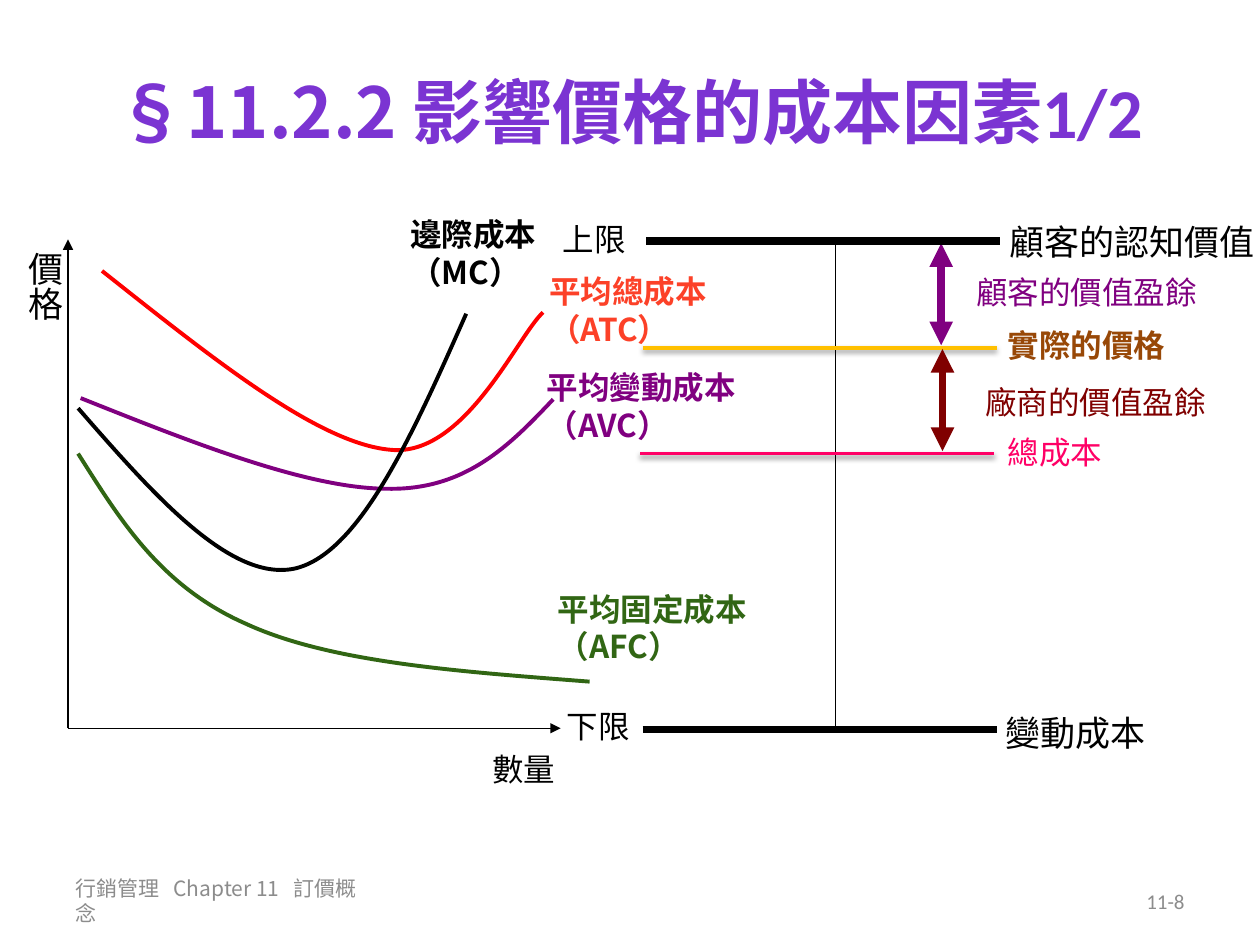
from lxml import etree
from pptx import Presentation
from pptx.dml.color import RGBColor
from pptx.enum import shapes, text
from pptx.oxml import ns
from pptx.util import Inches, Pt

BLACK = RGBColor(0x00, 0x00, 0x00)
GRAY = RGBColor(0x8C, 0x8C, 0x8C)
TITLE_PURPLE = RGBColor(0x7B, 0x34, 0xD2)
PURPLE = RGBColor(0x80, 0x00, 0x80)
MAROON = RGBColor(0x80, 0x00, 0x00)
GOLD = RGBColor(0xFF, 0xC0, 0x00)
BROWN = RGBColor(0x98, 0x48, 0x07)
PINK = RGBColor(0xFF, 0x00, 0x66)
RED = RGBColor(0xFF, 0x00, 0x00)
ORANGE_RED = RGBColor(0xFC, 0x41, 0x28)
GREEN = RGBColor(0x31, 0x66, 0x14)
CJK = "Noto Sans CJK SC"
LATIN = "Calibri"

presentation = Presentation()
presentation.slide_width = Inches(10)
presentation.slide_height = Inches(7.5)
slide = presentation.slides.add_slide(presentation.slide_layouts[5])


def add_run(paragraph, words, size, color, bold=False, latin=CJK):
    run = paragraph.add_run()
    run.text = words
    run.font.size = Pt(size)
    run.font.bold = bold
    run.font.color.rgb = color
    run.font.name = latin
    east_asian = etree.SubElement(run._r.get_or_add_rPr(), ns.qn("a:ea"))
    east_asian.set("typeface", CJK)


def add_line(start, end, color, width, arrows=(), shadow=False):
    line = slide.shapes.add_connector(
        shapes.MSO_CONNECTOR.STRAIGHT,
        Inches(start[0]), Inches(start[1]), Inches(end[0]), Inches(end[1]))
    line.line.color.rgb = color
    line.line.width = Pt(width)
    for arrow in arrows:
        etree.SubElement(line.line._get_or_add_ln(), ns.qn(f"a:{arrow}")).set("type", "triangle")
    effects = etree.SubElement(line._element.spPr, ns.qn("a:effectLst"))
    if shadow:
        outer = etree.SubElement(effects, ns.qn("a:outerShdw"), blurRad=str(Pt(3.1)),
                                 dist=str(Pt(1.6)), dir="5400000", rotWithShape="0")
        shade = etree.SubElement(outer, ns.qn("a:srgbClr"), val="000000")
        etree.SubElement(shade, ns.qn("a:alpha"), val="38000")


# Title
title = slide.shapes.title
title.left, title.top = Inches(0.5), Inches(0.21)
title.width, title.height = Inches(9), Inches(1.34)
title.text_frame.vertical_anchor = text.MSO_ANCHOR.MIDDLE
paragraph = title.text_frame.paragraphs[0]
paragraph.alignment = text.PP_ALIGN.CENTER
add_run(paragraph, "§11.2.2 影響", 40, TITLE_PURPLE, bold=True)
add_run(paragraph, "價格的成本因素1/2", 40, TITLE_PURPLE, bold=True, latin=LATIN)

# Price range: limits, price levels and surplus arrows
add_line((7.47, 1.93), (7.47, 2.74), PURPLE, 4.5, ("headEnd", "tailEnd"))
add_line((6.63, 1.93), (6.63, 5.8), BLACK, 0.75)
add_line((5.1, 2.76), (7.91, 2.76), GOLD, 2, shadow=True)
add_line((5.08, 3.6), (7.89, 3.6), PINK, 2, shadow=True)
add_line((7.48, 2.77), (7.48, 3.58), MAROON, 4.5, ("headEnd", "tailEnd"))
add_line((5.13, 1.91), (7.94, 1.91), BLACK, 4.5)
add_line((5.1, 5.79), (7.91, 5.79), BLACK, 4.5)

# Cost curves: a start point, then two cubic Bezier segments
cost_curves = [
    (RED, [(0.81, 2.15), (1.67, 2.83), (2.52, 3.52), (3.1, 3.57),
           (3.69, 3.63), (4.11, 2.66), (4.31, 2.48)]),
    (PURPLE, [(0.64, 3.16), (1.54, 3.52), (2.45, 3.88), (3.08, 3.88),
              (3.7, 3.89), (4.05, 3.53), (4.39, 3.17)]),
    (BLACK, [(0.62, 3.24), (1.23, 3.94), (1.84, 4.63), (2.35, 4.51),
             (2.86, 4.38), (3.28, 3.44), (3.7, 2.49)]),
    (GREEN, [(0.62, 3.6), (0.95, 4.12), (1.27, 4.65), (1.95, 4.95),
             (2.62, 5.26), (3.65, 5.33), (4.68, 5.41)]),
]
for color, controls in cost_curves:
    points = [(Inches(x), Inches(y)) for x, y in controls]
    builder = slide.shapes.build_freeform(*points[0])
    builder.add_line_segments(points[1:], close=False)
    curve = builder.convert_to_shape()
    curve.shadow.inherit = False
    curve.fill.background()
    curve.line.color.rgb = color
    curve.line.width = Pt(2.25)
    # Every three straight segments become one Bezier segment
    segments = list(curve._element.iter(ns.qn("a:lnTo")))
    outline = segments[0].getparent()
    for first in range(0, len(segments), 3):
        bezier = etree.SubElement(outline, ns.qn("a:cubicBezTo"))
        for segment in segments[first:first + 3]:
            bezier.append(segment[0])
            outline.remove(segment)

# Axes
add_line((0.54, 5.78), (0.54, 1.9), BLACK, 0.75, ("tailEnd",))
add_line((0.54, 5.78), (4.45, 5.78), BLACK, 0.75, ("tailEnd",))

# Labels: words, left, top, width, height, size, color, bold
labels = [
    ("顧客的價值盈餘", 7.65, 2.12, 2.54, 0.4, 18, PURPLE, False),
    ("顧客的認知價值", 7.91, 1.7, 2.28, 0.44, 20, BLACK, False),
    ("實際的價格", 7.9, 2.54, 1.79, 0.4, 18, BROWN, True),
    ("總成本", 7.9, 3.39, 1.31, 0.4, 18, PINK, False),
    ("廠商的價值盈餘", 7.72, 2.99, 1.98, 0.4, 18, MAROON, False),
    ("變動成本", 7.88, 5.6, 1.32, 0.44, 20, BLACK, False),
    ("上限", 4.37, 1.7, 1.04, 0.4, 18, BLACK, False),
    ("下限", 4.4, 5.56, 1.04, 0.4, 18, BLACK, False),
    ("邊際成本（MC）", 3.16, 1.66, 1.23, 0.71, 18, BLACK, True),
    ("平均總成本（ATC）", 4.26, 2.11, 1.74, 0.71, 18, ORANGE_RED, True),
    ("平均變動成本（AVC）", 4.24, 2.87, 1.74, 0.71, 18, PURPLE, True),
    ("平均固定成本（AFC）", 4.33, 4.63, 1.74, 0.71, 18, GREEN, True),
    ("數量", 3.81, 5.9, 0.78, 0.4, 18, BLACK, False),
    ("價格", 0.03, 1.9, 0.54, 0.93, 20, BLACK, False),
]
for words, left, top, width, height, size, color, bold in labels:
    label = slide.shapes.add_textbox(Inches(left), Inches(top), Inches(width), Inches(height))
    label.text_frame.word_wrap = True
    add_run(label.text_frame.paragraphs[0], words, size, color, bold)

# The last label, on the price axis, reads downwards
label.text_frame._txBody.bodyPr.set("vert", "eaVert")

# Footer and slide number
footers = [
    ("行銷管理   Chapter 11   訂價概念", 0.5, 2.45, text.PP_ALIGN.LEFT, CJK),
    ("11-8", 7.17, 2.33, text.PP_ALIGN.RIGHT, LATIN),
]
for words, left, width, alignment, font in footers:
    footer = slide.shapes.add_textbox(Inches(left), Inches(6.95), Inches(width), Inches(0.4))
    footer.text_frame.word_wrap = True
    footer.text_frame.vertical_anchor = text.MSO_ANCHOR.MIDDLE
    paragraph = footer.text_frame.paragraphs[0]
    paragraph.alignment = alignment
    add_run(paragraph, words, 12, GRAY, latin=font)

presentation.save("out.pptx")
